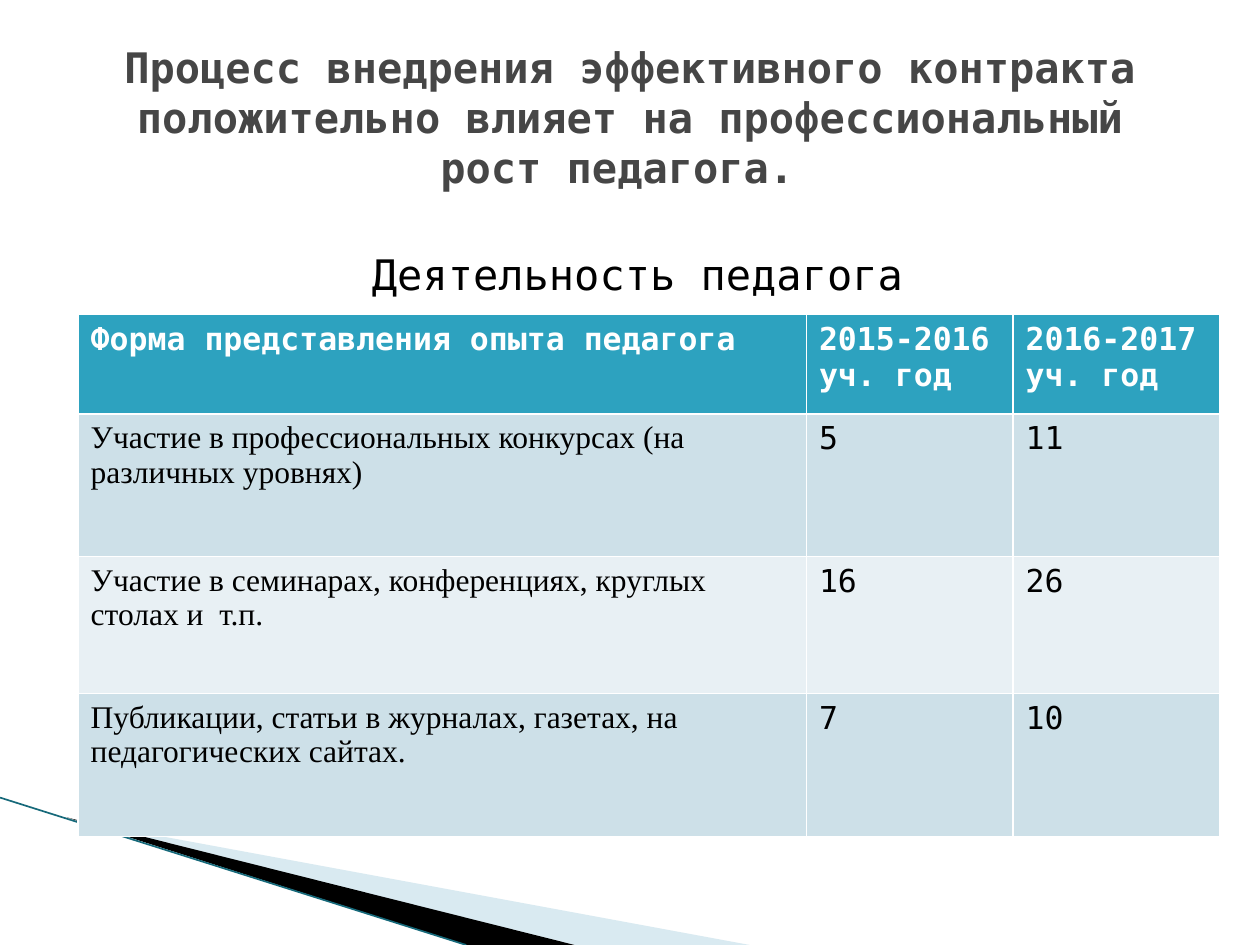
import pptx
import pptx.util
import pptx.dml.color
import pptx.enum.text
import pptx.enum.shapes
import pptx.oxml.ns
import lxml.etree

RGB = pptx.dml.color.RGBColor
BLACK = RGB(0, 0, 0)
WHITE = RGB(255, 255, 255)
GREY = RGB(0x46, 0x46, 0x46)
TEAL = RGB(0x2D, 0xA2, 0xBF)
DEEP = RGB(0x16, 0x69, 0x7A)
PALE = RGB(0xA0, 0xCB, 0xDC)
BANDS = [RGB(0xCD, 0xE0, 0xE8), RGB(0xE8, 0xF0, 0xF4)]
MONO, SERIF = "DejaVu Sans Mono", "Times New Roman"
WIDE, HIGH = pptx.util.Inches(10), pptx.util.Inches(7.5)
COLS = [0.578, 0.164, 0.164]
ROWS = [0.105, 0.151, 0.145, 0.151]
DATA = [
    ["Форма представления опыта педагога", "2015-2016 уч. год", "2016-2017 уч. год"],
    ["Участие в профессиональных конкурсах (на различных уровнях)", "5", "11"],
    ["Участие в семинарах, конференциях, круглых столах и  т.п.", "16", "26"],
    ["Публикации, статьи в журналах, газетах, на педагогических сайтах.", "7", "10"],
]


def place(x, y):
    """Turn shares of the slide into lengths."""
    return round(x * WIDE), round(y * HIGH)


def style(frame, size, face, color, bold=False):
    """Format every run in a text frame."""
    for para in frame.paragraphs:
        for run in para.runs:
            font = run.font
            font.size, font.name, font.bold = pptx.util.Pt(size), face, bold
            font.color.rgb = color


def wedge(slide, points, color, alpha=100):
    """Draw a filled outline with the given opacity in percent."""
    spots = [place(*point) for point in points]
    pen = slide.shapes.build_freeform(*spots[0])
    pen.add_line_segments(spots[1:], close=True)
    shape = pen.convert_to_shape()
    shape.shadow.inherit = False
    shape.line.fill.background()
    shape.fill.solid()
    shape.fill.fore_color.rgb = color
    if alpha < 100:
        tone = next(shape.element.iter(pptx.oxml.ns.qn("a:srgbClr")))
        mark = lxml.etree.SubElement(tone, pptx.oxml.ns.qn("a:alpha"))
        mark.set("val", str(alpha * 1000))


def rule(slide, start, end, color):
    """Draw a thin straight line."""
    kind = pptx.enum.shapes.MSO_CONNECTOR.STRAIGHT
    line = slide.shapes.add_connector(kind, *place(*start), *place(*end))
    line.line.color.rgb = color
    line.line.width = pptx.util.Pt(0.95)
    props = line.element.find(pptx.oxml.ns.qn("p:spPr"))
    lxml.etree.SubElement(props, pptx.oxml.ns.qn("a:effectLst"))


def label(slide, spot, size, text, color, bold=False):
    """Add a centred block of text."""
    frame = slide.shapes.add_textbox(*place(*spot), *place(*size)).text_frame
    frame.word_wrap = True
    frame.vertical_anchor = pptx.enum.text.MSO_ANCHOR.MIDDLE
    frame.text = text
    frame.paragraphs[0].alignment = pptx.enum.text.PP_ALIGN.CENTER
    style(frame, 24, MONO, color, bold)


def grid(slide, spot):
    """Add the table of activity by school year."""
    size = place(sum(COLS), sum(ROWS))
    table = slide.shapes.add_table(len(ROWS), len(COLS), *place(*spot), *size).table
    for col, share in zip(table.columns, COLS):
        col.width = round(share * WIDE)
    for row, share in zip(table.rows, ROWS):
        row.height = round(share * HIGH)
    for i, line in enumerate(DATA):
        for j, text in enumerate(line):
            cell = table.cell(i, j)
            head = i == 0
            cell.fill.solid()
            cell.fill.fore_color.rgb = TEAL if head else BANDS[(i - 1) % 2]
            cell.text_frame.text = text
            face = MONO if head or j else SERIF
            style(cell.text_frame, 18, face, WHITE if head else BLACK, head)


def main():
    """Build the slide and save it."""
    deck = pptx.Presentation()
    deck.slide_width, deck.slide_height = WIDE, HIGH
    slide = deck.slides.add_slide(deck.slide_layouts[6])
    wedge(slide, [(0.055, 0.867), (0.595, 1), (0.456, 1)], PALE, 40)
    wedge(slide, [(0.053, 0.865), (0.456, 1), (0.37, 1)], BLACK)
    rule(slide, (0, 0.844), (0.37, 1), DEEP)
    label(slide, (0.056, 0.257), (0.9, 0.066), "Деятельность педагога", BLACK)
    title = ("Процесс внедрения эффективного контракта положительно влияет "
             "на профессиональный рост педагога. ")
    label(slide, (0.05, 0.04), (0.9, 0.167), title, GREY, True)
    grid(slide, (0.062, 0.333))
    deck.save("out.pptx")


if __name__ == "__main__":
    main()
